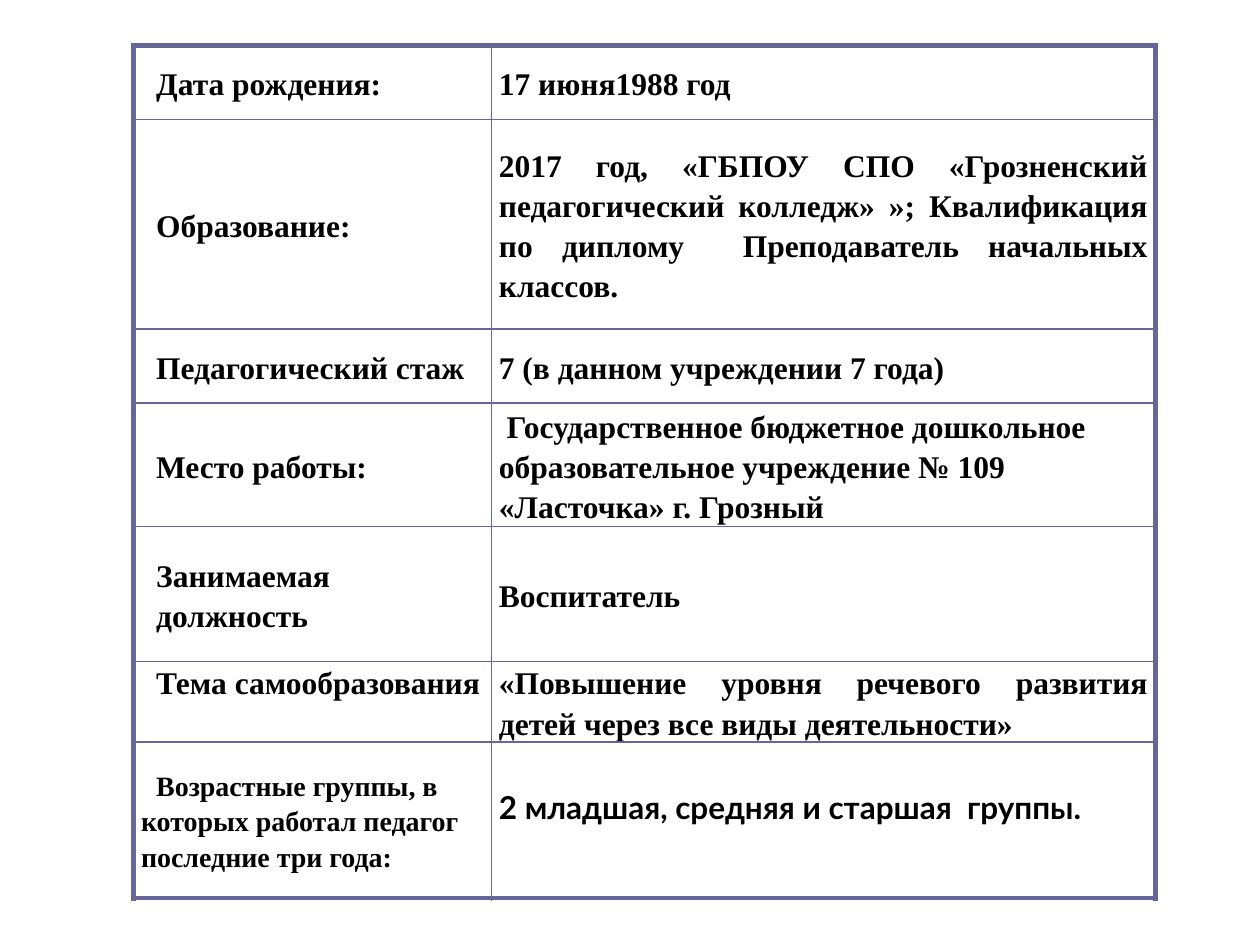
from lxml import etree
from pptx import Presentation
from pptx.dml.color import RGBColor
from pptx.enum import text as t
from pptx.oxml import ns
from pptx.util import Inches, Pt

COLORS = {"text": "000000", "border": "666699"}
SERIF = "Times New Roman"
LEFT, JUSTIFY = t.PP_ALIGN.LEFT, t.PP_ALIGN.JUSTIFY
MIDDLE, TOP = t.MSO_ANCHOR.MIDDLE, t.MSO_ANCHOR.TOP

column_widths = [2.84, 5.27]
# height, label paragraphs, value, value alignment
rows = [
    (0.59, ["Дата рождения:"], "17 июня1988 год", JUSTIFY),
    (1.66, ["Образование:"],
     "2017 год, «ГБПОУ СПО «Грозненский педагогический колледж» »; "
     "Квалификация по диплому  Преподаватель начальных классов.", JUSTIFY),
    (0.59, ["Педагогический стаж"], "7 (в данном учреждении 7 года)", JUSTIFY),
    (0.98, ["Место работы:"],
     " Государственное бюджетное дошкольное образовательное учреждение № 109  "
     "«Ласточка» г. Грозный", LEFT),
    (1.07, ["Занимаемая", "должность"], "Воспитатель", JUSTIFY),
    (0.64, ["Тема самообразования"],
     "«Повышение уровня речевого развития детей через все виды деятельности»", JUSTIFY),
    (1.24, ["Возрастные группы, в которых работал педагог последние три года:"],
     "2 младшая, средняя и старшая  группы.", JUSTIFY),
]
last = len(rows) - 1


def fill_cell(cell, lines, align=LEFT, indent=0, size=18, font=SERIF):
    margins = {"margin_left": 0.06, "margin_right": 0.06, "margin_top": 0, "margin_bottom": 0}
    for name, value in margins.items():
        setattr(cell, name, Inches(value))
    cell.vertical_anchor = MIDDLE
    cell.text_frame.text = "\n".join(lines)
    for para in cell.text_frame.paragraphs:
        para.alignment = align
        para.line_spacing = 1.15
        if indent:
            para._p.get_or_add_pPr().set("indent", str(Inches(indent)))
        span = para.runs[0]
        for name, value in {"name": font, "size": Pt(size), "bold": True}.items():
            setattr(span.font, name, value)
        span.font.color.rgb = RGBColor.from_string(COLORS["text"])


def set_borders(cell, widths):
    """Draw the left, right, top and bottom borders, with widths in points."""
    properties = cell._tc.get_or_add_tcPr()
    for position, (side, width) in enumerate(zip("LRTB", widths)):
        line = etree.Element(ns.qn(f"a:ln{side}"), w=str(Pt(width)))
        fill = etree.SubElement(line, ns.qn("a:solidFill"))
        etree.SubElement(fill, ns.qn("a:srgbClr"), val=COLORS["border"])
        properties.insert(position, line)


deck = Presentation()
deck.slide_width, deck.slide_height = Inches(10), Inches(7.5)
page = deck.slides.add_slide(deck.slide_layouts[6])

frame = page.shapes.add_table(
    len(rows), 2, Inches(1.06), Inches(0.36),
    Inches(sum(column_widths)), Inches(sum(row[0] for row in rows)))
table = frame.table
table.first_row = table.horz_banding = False
for column, width in zip(table.columns, column_widths):
    column.width = Inches(width)

for index, (height, label, value, align) in enumerate(rows):
    table.rows[index].height = Inches(height)
    label_cell, value_cell = table.cell(index, 0), table.cell(index, 1)
    fill_cell(label_cell, label, indent=0.12, size=16 if index == last else 18)
    fill_cell(value_cell, [value], align, font="Lato" if index == last else SERIF)
    top = 3 if index == 0 else 1
    bottom = 3 if index == last else 1
    for cell, left, right in [(label_cell, 3, 1), (value_cell, 1, 3)]:
        cell.fill.background()
        set_borders(cell, [left, right, top, bottom])

table.cell(5, 0).vertical_anchor = TOP
table.cell(last, 1).margin_bottom = Inches(0.24)

deck.save("out.pptx")
